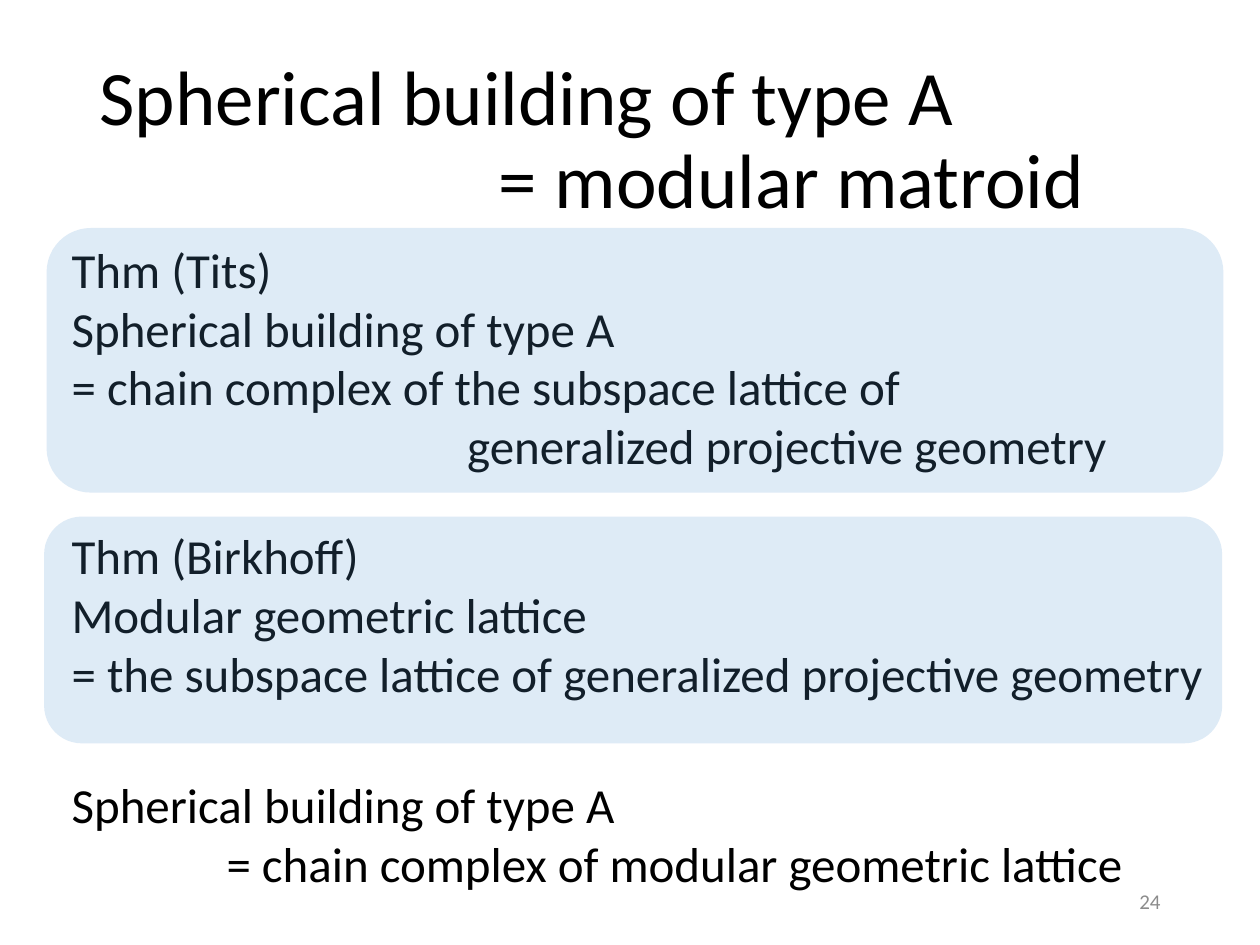
from lxml.etree import SubElement
from pptx import Presentation
from pptx.dml.color import RGBColor
from pptx.enum.shapes import MSO_SHAPE as Shape
from pptx.enum.text import MSO_ANCHOR as Anchor, MSO_AUTO_SIZE as Fit, PP_ALIGN as Align
from pptx.oxml.ns import qn
from pptx.util import Inches, Pt

BLACK = RGBColor(0, 0, 0)
GRAY = RGBColor(0x8C, 0x8C, 0x8C)
BLUE = RGBColor(0x5B, 0x9B, 0xD5)
FONT = "Calibri"


def to_emu(box):
    return [Inches(v) for v in box]


def write(frame, lines, size, color=BLACK, align=Align.LEFT, inset=0):
    frame.word_wrap = True
    frame.auto_size = Fit.NONE
    frame.text = "\n".join(lines)
    for para in frame.paragraphs:
        para.alignment = align
        font = para.font
        font.name, font.size, font.color.rgb = FONT, Pt(size), color
    if inset:
        props = frame.paragraphs[-1]._p.get_or_add_pPr()
        props.set("marL", str(Inches(inset)))
        props.set("indent", "0")


def add_title(slide, box, lines, inset):
    title = slide.shapes.title
    title.left, title.top, title.width, title.height = to_emu(box)
    frame = title.text_frame
    write(frame, lines, 44, inset=inset)
    frame.vertical_anchor = Anchor.MIDDLE
    for para in frame.paragraphs:
        para.line_spacing = 0.9


def add_text(slide, box, lines, inset=0):
    text = slide.shapes.add_textbox(*to_emu(box))
    write(text.text_frame, lines, 28, inset=inset)


def add_panel(slide, box):
    panel = slide.shapes.add_shape(Shape.ROUNDED_RECTANGLE, *to_emu(box))
    panel.shadow.inherit = False
    panel.line.fill.background()
    panel.fill.solid()
    panel.fill.fore_color.rgb = BLUE
    tint = panel._element.spPr.find(qn("a:solidFill"))[0]
    SubElement(tint, qn("a:alpha")).set("val", "20000")


def add_number(slide, box, number):
    frame = slide.shapes.add_textbox(*to_emu(box)).text_frame
    write(frame, [number], 12, GRAY, Align.RIGHT)
    frame.vertical_anchor = Anchor.MIDDLE


def main():
    deck = Presentation()
    deck.slide_width, deck.slide_height = Inches(10), Inches(7.5)
    slide = deck.slides.add_slide(deck.slide_layouts[5])

    add_title(slide, (0.69, 0.4, 8.62, 1.45),
              ["Spherical building of type A", "= modular matroid"], 3.17)
    add_number(slide, (7.06, 6.95, 2.25, 0.4), "24")
    add_text(slide, (0.47, 1.85, 8.54, 1.99),
             ["Thm (Tits)",
              "Spherical building of type A",
              "= chain complex of the subspace lattice of",
              "generalized projective geometry"], 3.14)
    add_text(slide, (0.47, 4.12, 9.46, 1.51),
             ["Thm (Birkhoff)",
              "Modular geometric lattice",
              "= the subspace lattice of generalized projective geometry"])
    add_panel(slide, (0.37, 1.81, 9.34, 2.1))
    add_panel(slide, (0.35, 4.1, 9.35, 1.8))
    add_text(slide, (0.47, 6.1, 8.74, 1.04),
             ["Spherical building of type A",
              "= chain complex of modular geometric lattice"], 1.23)

    deck.save("out.pptx")


if __name__ == "__main__":
    main()
